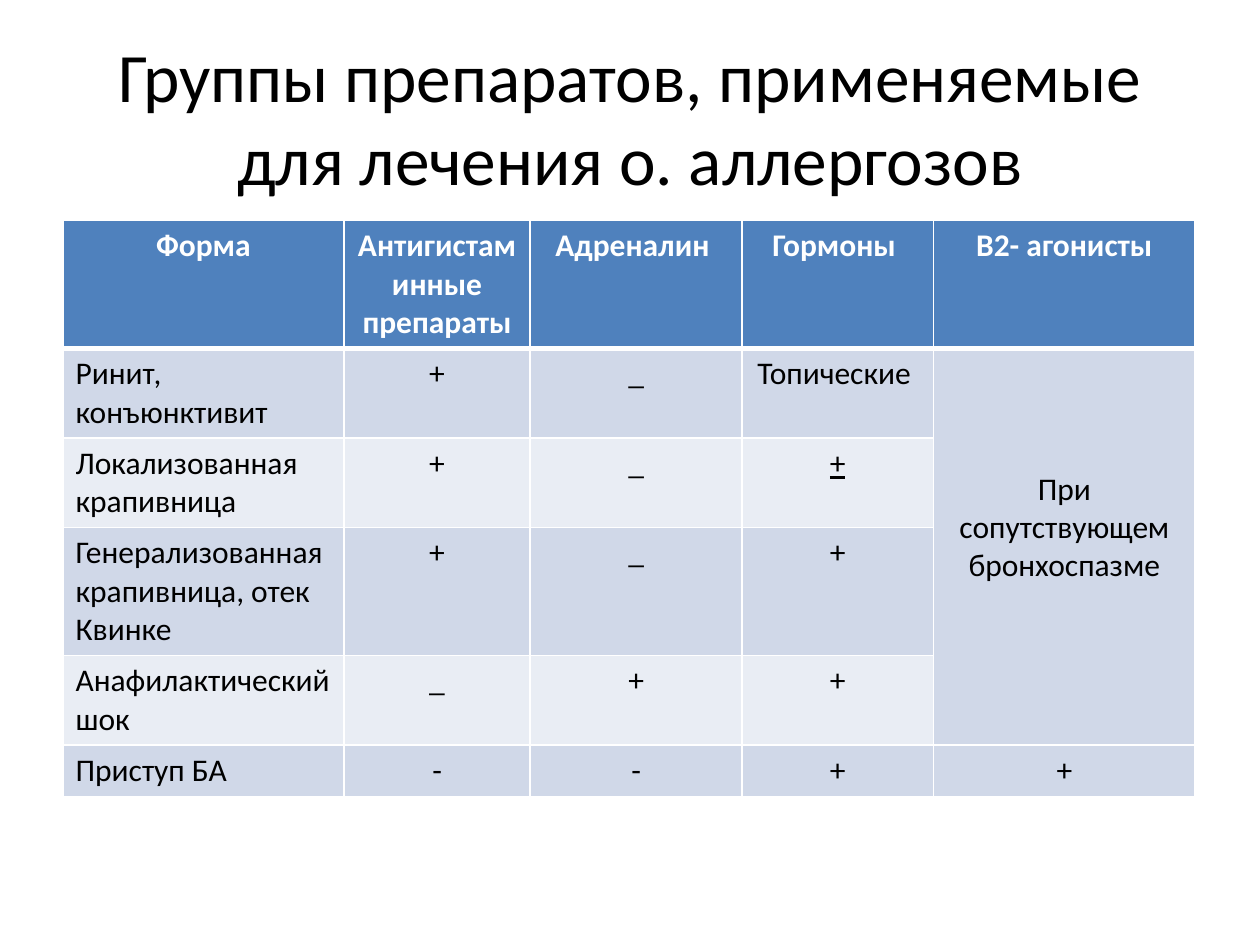
from dataclasses import dataclass

from lxml import etree
from pptx import Presentation
from pptx.dml.color import RGBColor
from pptx.enum import text as t
from pptx.oxml import ns
from pptx.util import Pt

BLACK = RGBColor(0x00, 0x00, 0x00)
WHITE = RGBColor(0xFF, 0xFF, 0xFF)
HEADER_BLUE = RGBColor(0x4F, 0x81, 0xBD)
BAND_DARK = RGBColor(0xD0, 0xD8, 0xE8)
BAND_LIGHT = RGBColor(0xE9, 0xED, 0xF4)
FONT = "Calibri"

TITLE = "Группы препаратов, применяемые для лечения о. аллергозов"
HEADINGS = ("Форма", "Антигистаминные препараты", "Адреналин ", "Гормоны ",
            "Β2- агонисты")
COLUMN_WIDTHS = (160.5, 106.5, 121, 109.5, 149.5)
HEADER_HEIGHT = 73


@dataclass(frozen=True)
class Treatment:
    form: str
    antihistamine: str
    adrenaline: str
    hormones: str
    agonists: str
    height: float

    def entries(self) -> tuple:
        return (self.form, self.antihistamine, self.adrenaline,
                self.hormones, self.agonists)


TREATMENTS = (
    Treatment("Ринит, конъюнктивит", "+", "_", "Топические ",
              "При сопутствующем бронхоспазме", 51.2),
    Treatment("Локализованная крапивница", "+", "_", "+", "", 51.2),
    Treatment("Генерализованная крапивница, отек Квинке", "+", "_", "+", "", 73),
    Treatment("Анафилактический шок", "_", "+", "+", "", 51.2),
    Treatment("Приступ БА", "-", "-", "+", "+", 29.2),
)


def set_borders(cell, bottom: float = 1, top: float = 1) -> None:
    """Draw white borders; they must precede the fill in the cell XML."""
    properties = cell._tc.get_or_add_tcPr()
    widths = {"lnL": 1, "lnR": 1, "lnT": top, "lnB": bottom}
    for position, (side, width) in enumerate(widths.items()):
        line = etree.Element(ns.qn(f"a:{side}"), w=str(Pt(width)))
        fill = etree.SubElement(line, ns.qn("a:solidFill"))
        etree.SubElement(fill, ns.qn("a:srgbClr"), val=str(WHITE))
        properties.insert(position, line)


def fill_cell(cell, wording: str, fill: RGBColor, color: RGBColor,
              bold: bool, centred: bool) -> None:
    cell.fill.solid()
    cell.fill.fore_color.rgb = fill
    cell.text = wording
    paragraph = cell.text_frame.paragraphs[0]
    paragraph.alignment = t.PP_ALIGN.CENTER if centred else t.PP_ALIGN.LEFT
    font = paragraph.font
    font.name, font.size, font.bold = FONT, Pt(18), bold
    font.color.rgb = color


def add_title(slide) -> None:
    title = slide.shapes.title
    title.left, title.top, title.width, title.height = Pt(36), Pt(21.6), Pt(648), Pt(90)
    title.text = TITLE
    title.text_frame.vertical_anchor = t.MSO_ANCHOR.MIDDLE
    paragraph = title.text_frame.paragraphs[0]
    paragraph.alignment = t.PP_ALIGN.CENTER
    paragraph.font.name, paragraph.font.size = FONT, Pt(39.6)
    paragraph.font.color.rgb = BLACK


def add_treatment_table(slide) -> None:
    heights = [HEADER_HEIGHT] + [row.height for row in TREATMENTS]
    table = slide.shapes.add_table(
        len(heights), len(HEADINGS), Pt(36), Pt(126),
        Pt(sum(COLUMN_WIDTHS)), Pt(sum(heights))).table
    for column, width in zip(table.columns, COLUMN_WIDTHS):
        column.width = Pt(width)
    for row, height in zip(table.rows, heights):
        row.height = Pt(height)

    # Header row with a thick rule below
    for column, heading in enumerate(HEADINGS):
        cell = table.cell(0, column)
        fill_cell(cell, heading, HEADER_BLUE, WHITE, True, True)
        set_borders(cell, bottom=3)

    # Banded body rows
    for row, treatment in enumerate(TREATMENTS, start=1):
        band = BAND_DARK if row % 2 else BAND_LIGHT
        for column, entry in enumerate(treatment.entries()):
            cell = table.cell(row, column)
            fill_cell(cell, entry, band, BLACK, False, column > 0)
            set_borders(cell, top=3 if row == 1 else 1)

    # One note covers the first four forms; urticaria hormones are "plus or minus"
    note = table.cell(1, 4)
    note.merge(table.cell(4, 4))
    note.margin_top = Pt(69.5)
    table.cell(2, 3).text_frame.paragraphs[0].runs[0].font.underline = True


def main() -> None:
    presentation = Presentation()
    presentation.slide_width, presentation.slide_height = Pt(720), Pt(540)
    slide = presentation.slides.add_slide(presentation.slide_layouts[5])
    add_title(slide)
    add_treatment_table(slide)
    presentation.save("out.pptx")


if __name__ == "__main__":
    main()
